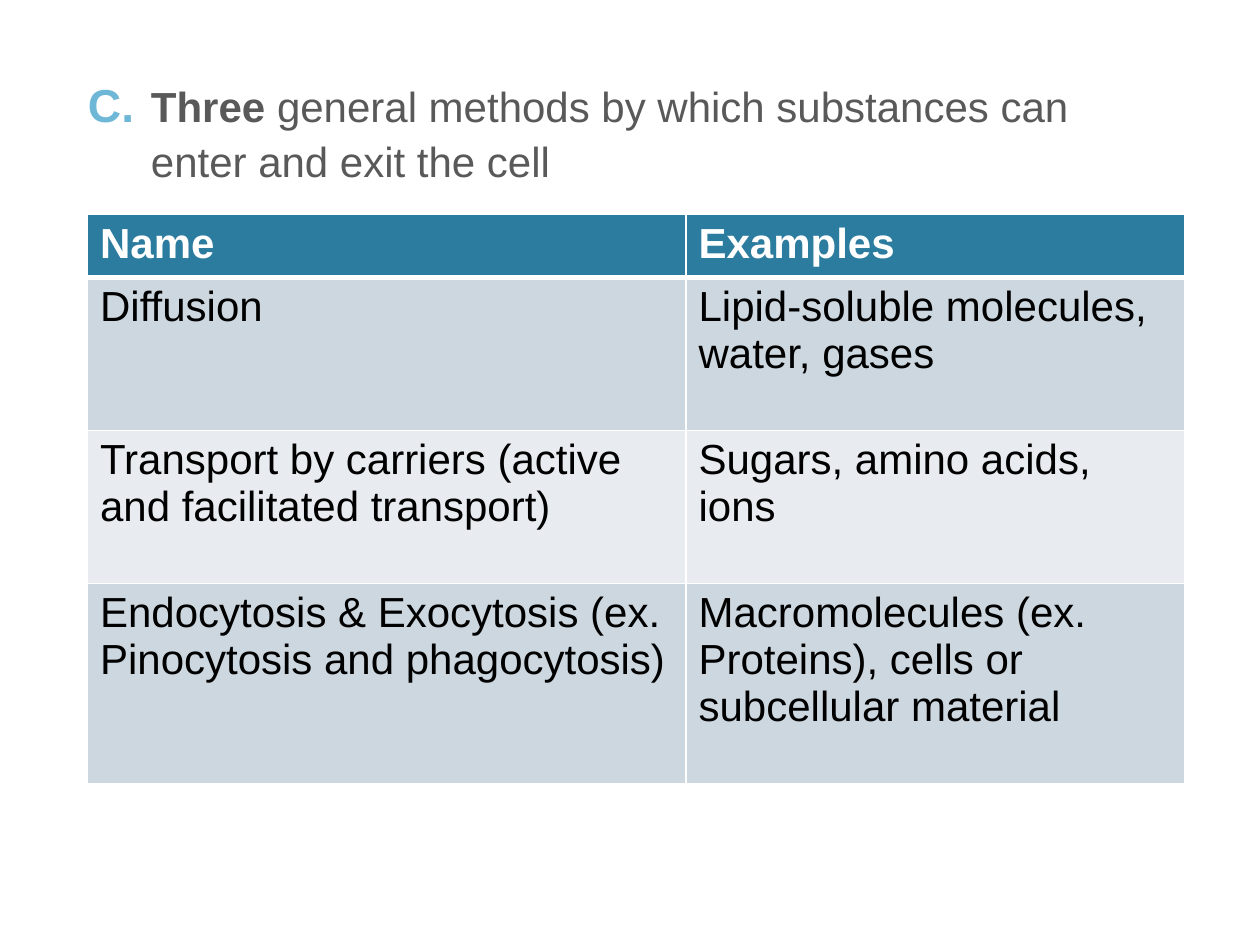
from dataclasses import dataclass

from lxml.etree import SubElement
from pptx import Presentation
from pptx.dml.color import RGBColor as Color
from pptx.oxml.ns import qn
from pptx.util import Pt


@dataclass(frozen=True)
class Theme:
    font: str = "Arial"
    text_size: float = 24
    bullet_percent: int = 110
    heading: str = "595959"
    bullet: str = "6FB7D7"
    header_fill: str = "2C7C9F"
    header_text: str = "FFFFFF"
    body_text: str = "000000"
    band_fills: tuple[str, str] = ("CDD7DF", "E8ECF0")
    border: str = "FFFFFF"
    thin: float = 1
    thick: float = 3


@dataclass(frozen=True)
class Method:
    name: str
    examples: str
    height: float


THEME = Theme()
COLUMN_WIDTHS = (342, 285)
ROWS = (
    Method("Name", "Examples", 34),
    Method("Diffusion", "Lipid-soluble molecules, water, gases", 87.5),
    Method("Transport by carriers (active and facilitated transport)",
           "Sugars, amino acids, ions", 87.5),
    Method("Endocytosis & Exocytosis (ex. Pinocytosis and phagocytosis)",
           "Macromolecules (ex. Proteins), cells or subcellular material", 114.3),
)


def add_span(para, text: str, color: str, bold: bool = False) -> None:
    span = para.add_run()
    span.text = text
    span.font.name = THEME.font
    span.font.size = Pt(THEME.text_size)
    span.font.bold = bold
    span.font.color.rgb = Color.from_string(color)


def letter_paragraph(para, start: int, indent: float) -> None:
    """Number the paragraph with a capital letter on a hanging indent."""
    props = para._p.get_or_add_pPr()
    props.set("marL", str(Pt(indent)))
    props.set("indent", str(-Pt(indent)))
    bullet_color = SubElement(props, qn("a:buClr"))
    SubElement(bullet_color, qn("a:srgbClr"), val=THEME.bullet)
    SubElement(props, qn("a:buSzPct"), val=str(THEME.bullet_percent * 1000))
    SubElement(props, qn("a:buFont"), typeface=THEME.font)
    SubElement(props, qn("a:buAutoNum"), type="alphaUcPeriod", startAt=str(start))


def add_heading(page) -> None:
    box = page.shapes.add_textbox(Pt(43.2), Pt(39.6), Pt(633.6), Pt(428))
    box.text_frame.word_wrap = True
    para = box.text_frame.paragraphs[0]
    para.space_before = Pt(20)
    para.line_spacing = 1.1
    letter_paragraph(para, start=3, indent=36)
    add_span(para, "Three ", THEME.heading, bold=True)
    add_span(para, "general methods by which substances can enter and exit the cell",
             THEME.heading)


def add_borders(cell, top: float, bottom: float) -> None:
    props = cell._tc.get_or_add_tcPr()
    widths = {"lnL": THEME.thin, "lnR": THEME.thin, "lnT": top, "lnB": bottom}
    for side, width in widths.items():
        line = SubElement(props, qn(f"a:{side}"), w=str(Pt(width)))
        fill = SubElement(line, qn("a:solidFill"))
        SubElement(fill, qn("a:srgbClr"), val=THEME.border)


def fill_cell(cell, text: str, row: int) -> None:
    is_header = row == 0
    add_borders(cell,
                top=THEME.thick if row == 1 else THEME.thin,
                bottom=THEME.thick if is_header else THEME.thin)
    color = THEME.header_fill if is_header else THEME.band_fills[(row - 1) % 2]
    cell.fill.solid()
    cell.fill.fore_color.rgb = Color.from_string(color)
    add_span(cell.text_frame.paragraphs[0], text,
             THEME.header_text if is_header else THEME.body_text, bold=is_header)


def add_methods_table(page) -> None:
    height = sum(method.height for method in ROWS)
    table = page.shapes.add_table(len(ROWS), len(COLUMN_WIDTHS), Pt(50), Pt(122.4),
                                  Pt(sum(COLUMN_WIDTHS)), Pt(height)).table
    for column, width in zip(table.columns, COLUMN_WIDTHS):
        column.width = Pt(width)
    for row, method in enumerate(ROWS):
        table.rows[row].height = Pt(method.height)
        for column, text in enumerate((method.name, method.examples)):
            fill_cell(table.cell(row, column), text, row)


def main() -> None:
    deck = Presentation()
    deck.slide_width, deck.slide_height = Pt(720), Pt(540)
    page = deck.slides.add_slide(deck.slide_layouts[6])
    add_heading(page)
    add_methods_table(page)
    deck.save("out.pptx")


if __name__ == "__main__":
    main()
